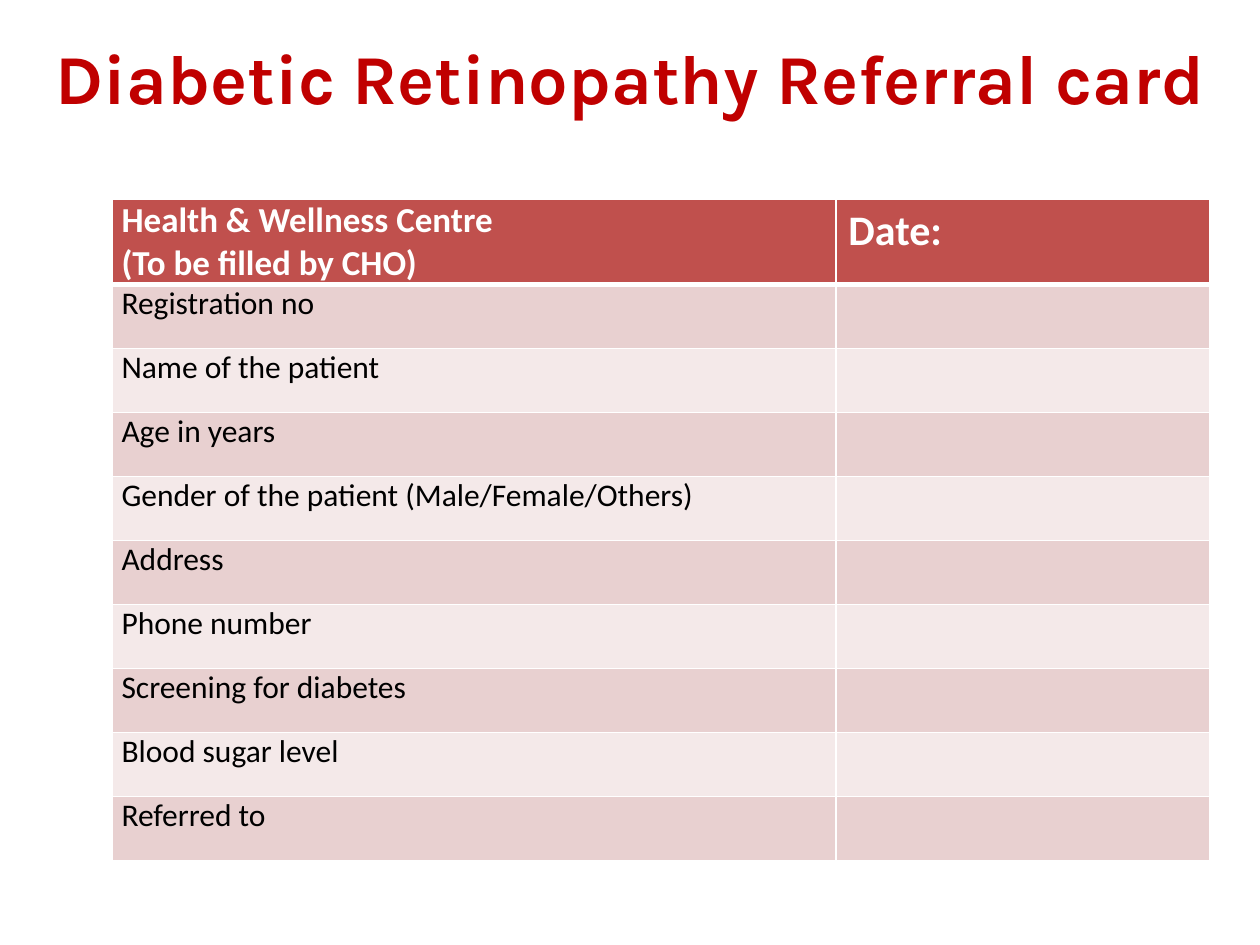
from lxml import etree
from pptx import Presentation
from pptx.dml.color import RGBColor
from pptx.enum.text import MSO_ANCHOR, PP_ALIGN
from pptx.oxml.ns import qn
from pptx.util import Cm, Pt

MID = MSO_ANCHOR.MIDDLE
LEFT, CENTER = PP_ALIGN.LEFT, PP_ALIGN.CENTER

TITLE = "Diabetic Retinopathy Referral card"
HEAD = ("Health & Wellness Centre\n(To be filled by CHO)", "Date:")
FIELDS = [
    "Registration no",
    "Name of the patient",
    "Age in years",
    "Gender of the patient (Male/Female/Others)",
    "Address",
    "Phone number",
    "Screening for diabetes",
    "Blood sugar level",
    "Referred to",
]
COLORS = {
    "title": "C00000",
    "head": "C0504D",
    "dark": "E8D0D0",
    "light": "F4E9E9",
    "white": "FFFFFF",
    "black": "000000",
}
COLS = (14.58, 7.54)
HEAD_H, ROW_H = 1.72, 1.29


def write(frame, text, size=18, color="black", bold=False, font="Calibri", align=LEFT):
    for i, line in enumerate(text.split("\n")):
        para = frame.add_paragraph() if i else frame.paragraphs[0]
        para.alignment = align
        run = para.add_run()
        run.text = line
        run.font.size = Pt(size)
        run.font.bold = bold
        run.font.name = font
        run.font.color.rgb = RGBColor.from_string(COLORS[color])


def border(cell, side, width):
    line = etree.SubElement(cell._tc.get_or_add_tcPr(), qn(f"a:ln{side}"), w=str(Pt(width)))
    fill = etree.SubElement(line, qn("a:solidFill"))
    etree.SubElement(fill, qn("a:srgbClr"), val=COLORS["white"])


def style(cell, color, top, bottom):
    for side, width in (("L", 1), ("R", 1), ("T", top), ("B", bottom)):
        border(cell, side, width)
    cell.fill.solid()
    cell.fill.fore_color.rgb = RGBColor.from_string(COLORS[color])


def trim(cell):
    cell.margin_left = cell.margin_right = Cm(0.18)
    cell.margin_top = cell.margin_bottom = 0


def main():
    deck = Presentation()
    deck.slide_width, deck.slide_height = Cm(25.4), Cm(19.05)
    slide = deck.slides.add_slide(deck.slide_layouts[6])

    box = slide.shapes.add_textbox(Cm(0.42), 0, Cm(24.56), Cm(3.1))
    box.text_frame.word_wrap = True
    box.text_frame.vertical_anchor = MID
    write(box.text_frame, TITLE, size=40, color="title", bold=True,
          font="Karla", align=CENTER)

    count = len(FIELDS) + 1
    high = HEAD_H + ROW_H * len(FIELDS)
    table = slide.shapes.add_table(
        count, len(COLS), Cm(2.27), Cm(4.02), Cm(sum(COLS)), Cm(high)).table
    for col, width in zip(table.columns, COLS):
        col.width = Cm(width)

    for i, row in enumerate(table.rows):
        row.height = Cm(ROW_H if i else HEAD_H)
        color = ("light", "dark")[i % 2] if i else "head"
        for cell in row.cells:
            style(cell, color, top=3 if i == 1 else 1, bottom=1 if i else 3)
        trim(row.cells[0])

    for j, (text, size) in enumerate(zip(HEAD, (20, 24))):
        write(table.cell(0, j).text_frame, text, size=size, color="white", bold=True)
    for i, text in enumerate(FIELDS, 1):
        write(table.cell(i, 0).text_frame, text)

    deck.save("out.pptx")


if __name__ == "__main__":
    main()
